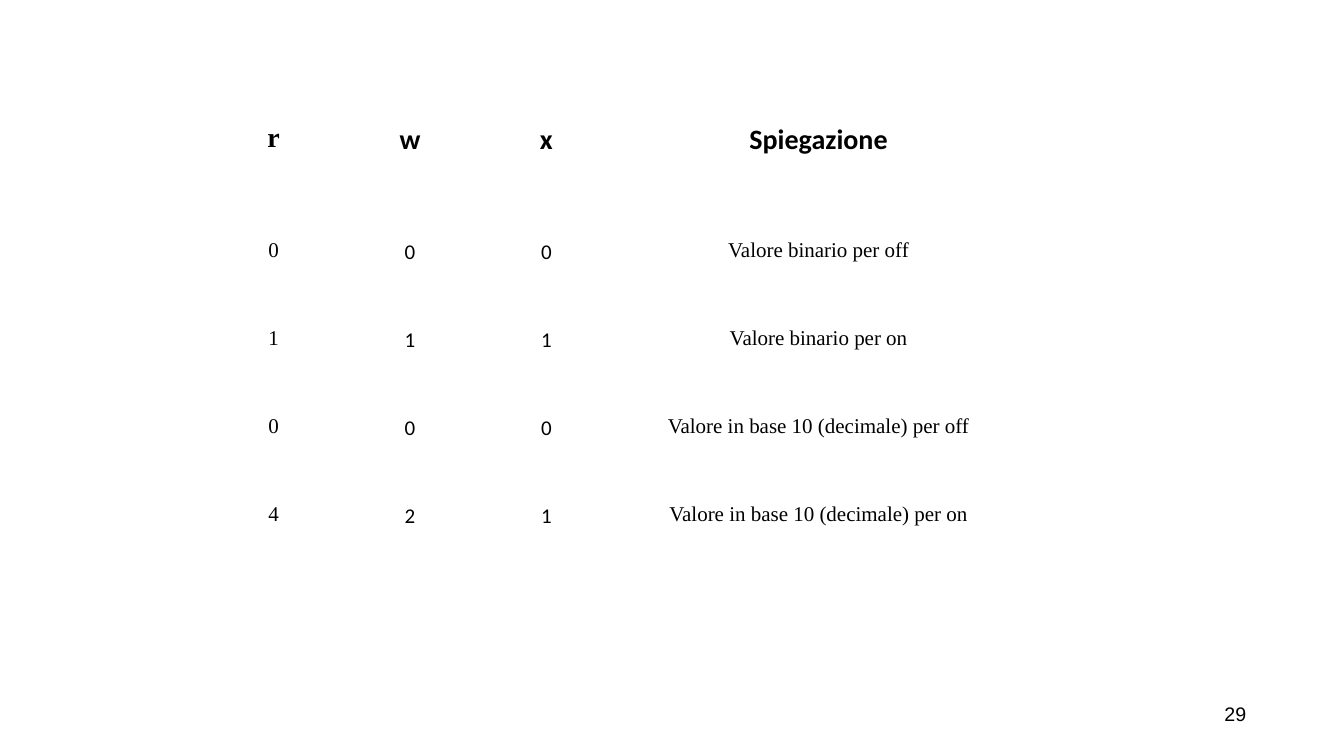
from pptx import Presentation
from pptx.dml.color import RGBColor
from pptx.enum.text import MSO_ANCHOR, PP_ALIGN
from pptx.util import Pt

# Content
HEAD = ("r", "w", "x", "Spiegazione")
ROWS = [
    ("0", "0", "0", "Valore binario per off"),
    ("1", "1", "1", "Valore binario per on"),
    ("0", "0", "0", "Valore in base 10 (decimale) per off"),
    ("4", "2", "1", "Valore in base 10 (decimale) per on"),
]
PAGE = "29"

# Theme and measures
THEME = dict(ink=RGBColor(0, 0, 0), serif="Times New Roman", sans="Calibri",
             plain="Arial", head=20, body=15, page=14)
LEFT, TOP = 146.8, 85.7
BIT, NOTE = 97.4, 291.5
TALL, LOW = 84, 62.9


def write(frame, text, font, size, bold=False, align=PP_ALIGN.CENTER, space=None):
    par = frame.paragraphs[0]
    par.alignment = align
    par.line_spacing = space
    run = par.add_run()
    run.text = text
    run.font.name = font
    run.font.size = Pt(size)
    run.font.bold = bold
    run.font.color.rgb = THEME["ink"]


deck = Presentation()
deck.slide_width, deck.slide_height = Pt(960), Pt(540)
slide = deck.slides.add_slide(deck.slide_layouts[6])

# Permission table
lines = [HEAD] + ROWS
wide = [BIT] * 3 + [NOTE]
high = [TALL] + [LOW] * len(ROWS)
grid = slide.shapes.add_table(len(lines), len(wide), Pt(LEFT), Pt(TOP),
                              Pt(sum(wide)), Pt(sum(high))).table
grid.first_row = grid.horz_banding = False
for col, width in zip(grid.columns, wide):
    col.width = Pt(width)
for i, line in enumerate(lines):
    grid.rows[i].height = Pt(high[i])
    top = i == 0
    serif = (0,) if top else (0, 3)
    for j, text in enumerate(line):
        cell = grid.cell(i, j)
        cell.fill.background()
        cell.margin_left = cell.margin_right = 0
        cell.margin_top = cell.margin_bottom = 0
        cell.vertical_anchor = MSO_ANCHOR.TOP
        write(cell.text_frame, text, THEME["serif" if j in serif else "sans"],
              THEME["head" if top else "body"], bold=top, space=1.07)

# Page number
frame = slide.shapes.add_textbox(Pt(848.2), Pt(495.4), Pt(49), Pt(28.8)).text_frame
frame.word_wrap = True
frame.vertical_anchor = MSO_ANCHOR.MIDDLE
write(frame, PAGE, THEME["plain"], THEME["page"], align=PP_ALIGN.RIGHT)

deck.save("out.pptx")
